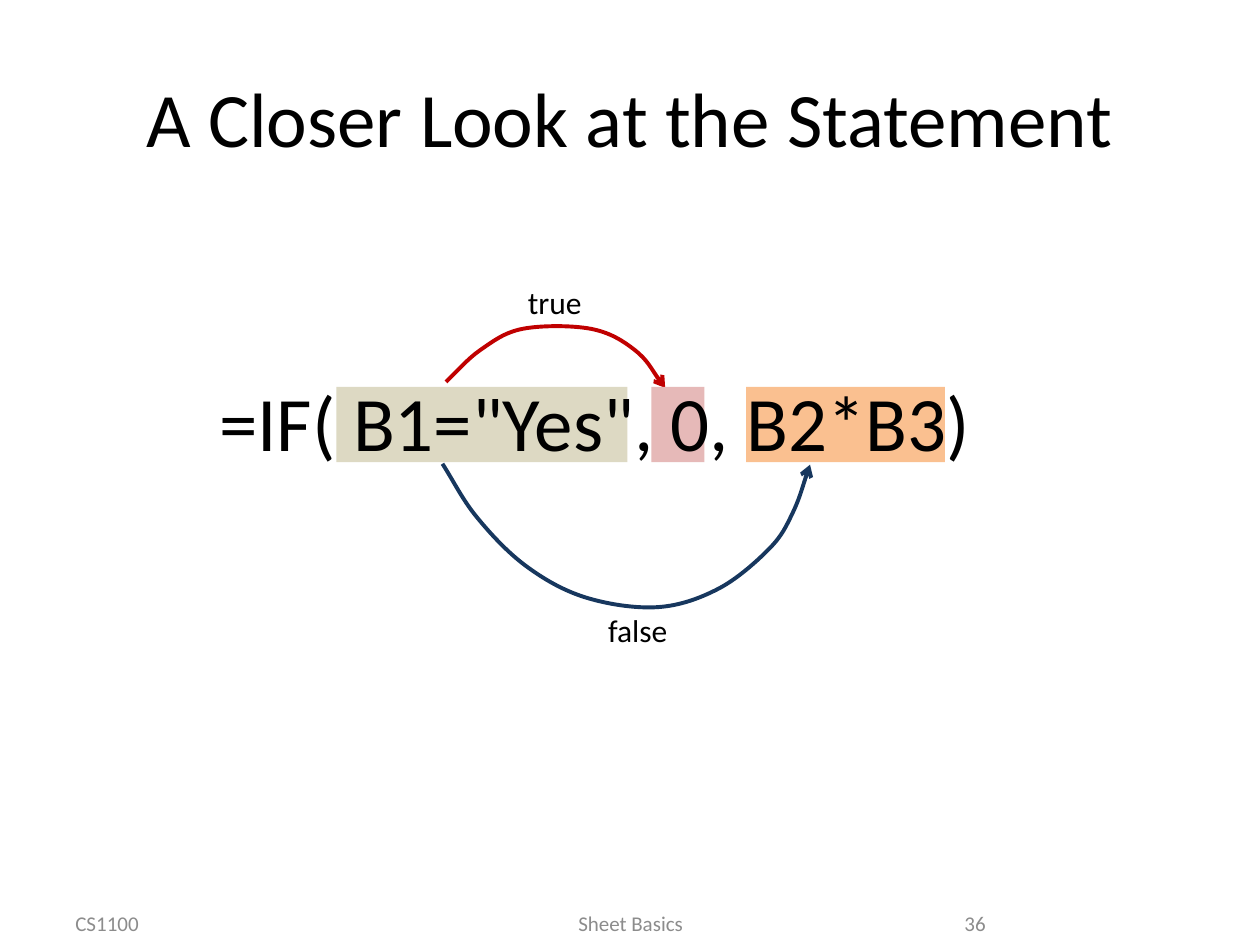
from lxml.etree import SubElement
from pptx import Presentation
from pptx.dml.color import RGBColor
from pptx.enum.shapes import MSO_SHAPE as Shape
from pptx.enum.text import MSO_ANCHOR as Anchor, PP_ALIGN as Align
from pptx.oxml.ns import qn
from pptx.util import Cm, Pt

COLORS = {
    "text": "000000", "footer": "8C8C8C",
    "condition": "DDD9C3", "then": "E6B9B8", "else": "FAC090",
    "true": "C00000", "false": "17375E",
}

# Places are left, top, width, height in cm
TITLE = ("A Closer Look at the Statement", (1.27, 0.76, 22.86, 3.18))
FORMULA = ('=IF( B1="Yes", 0, B2*B3)', (4.17, 7.42, 16.36, 2.13))

FOOTER_TOP, FOOTER_HEIGHT = 18.21, 0.79
FOOTERS = [  # text, left, width, alignment
    ("CS1100", 1.27, 5.92, Align.LEFT),
    ("Sheet Basics", 8.69, 8.05, Align.CENTER),
    ("36", 18.21, 1.91, Align.RIGHT),
]

BAND_TOP, BAND_HEIGHT = 7.8, 1.52
BANDS = {  # left, width
    "condition": (6.78, 5.87),
    "then": (13.13, 1.07),
    "else": (15.04, 4.01),
}

BRANCHES = {  # label place, points the curve passes through
    "true": ((10.39, 5.59, 1.6, 1.02),
             [(8.99, 7.7), (9.68, 7.06), (10.54, 6.63), (11.91, 6.63),
              (12.8, 7.06), (13.41, 7.82)]),
    "false": ((12.01, 12.19, 1.73, 1.02),
              [(8.92, 9.35), (9.6, 10.41), (10.59, 11.4), (11.79, 12.04),
               (13.26, 12.24), (14.5, 11.86), (15.52, 11.05),
               (15.98, 10.34), (16.33, 9.37)]),
}


def color(name):
    return RGBColor.from_string(COLORS[name])


def add_text(page, text, place, size=18, ink="text", align=Align.LEFT,
             anchor=Anchor.TOP, wrap=True):
    box = page.shapes.add_textbox(*map(Cm, place))
    frame = box.text_frame
    frame.word_wrap = wrap
    frame.vertical_anchor = anchor
    para = frame.paragraphs[0]
    para.alignment = align
    span = para.add_run()
    span.text = text
    span.font.name = "Calibri"
    span.font.size = Pt(size)
    span.font.color.rgb = color(ink)


def add_band(page, name):
    left, width = BANDS[name]
    band = page.shapes.add_shape(
        Shape.RECTANGLE, *map(Cm, (left, BAND_TOP, width, BAND_HEIGHT)))
    band.shadow.inherit = False
    band.fill.solid()
    band.fill.fore_color.rgb = color(name)
    band.line.fill.background()


def spline_controls(points):
    """Give two Bezier control points and the end point for each span."""
    def mirror(end, inner):
        return tuple(2 * e - i for e, i in zip(end, inner))

    chain = [mirror(points[0], points[1]), *points,
             mirror(points[-1], points[-2])]
    for before, start, end, after in zip(chain, chain[1:], chain[2:], chain[3:]):
        yield tuple(s + (e - b) / 6 for b, s, e in zip(before, start, end))
        yield tuple(e - (a - s) / 6 for s, e, a in zip(start, end, after))
        yield end


def add_curved_arrow(page, points, ink):
    outline = [tuple(map(Cm, point)) for point in spline_controls(points)]
    builder = page.shapes.build_freeform(*map(Cm, points[0]))
    builder.add_line_segments(outline, close=False)
    curve = builder.convert_to_shape()
    curve.shadow.inherit = False
    curve.fill.background()
    curve.line.color.rgb = color(ink)
    curve.line.width = Pt(2.25)

    # Join each three straight steps into one Bezier span
    track = next(curve.element.iter(qn("a:path")))
    steps = track.findall(qn("a:lnTo"))
    for index in range(0, len(steps), 3):
        bezier = SubElement(track, qn("a:cubicBezTo"))
        for step in steps[index:index + 3]:
            bezier.append(step[0])
            track.remove(step)
    SubElement(curve.line._get_or_add_ln(), qn("a:tailEnd"), type="arrow")


def main():
    deck = Presentation()
    deck.slide_width, deck.slide_height = Cm(25.4), Cm(19.05)
    page = deck.slides.add_slide(deck.slide_layouts[6])

    add_band(page, "condition")
    add_text(page, *TITLE, size=44, align=Align.CENTER, anchor=Anchor.MIDDLE)
    for text, left, width, align in FOOTERS:
        add_text(page, text, (left, FOOTER_TOP, width, FOOTER_HEIGHT), size=12,
                 ink="footer", align=align, anchor=Anchor.MIDDLE)
    for label, (place, points) in BRANCHES.items():
        add_curved_arrow(page, points, label)
        add_text(page, label, place, wrap=False)
    add_band(page, "then")
    add_band(page, "else")
    add_text(page, *FORMULA, size=44)

    deck.save("out.pptx")


if __name__ == "__main__":
    main()
